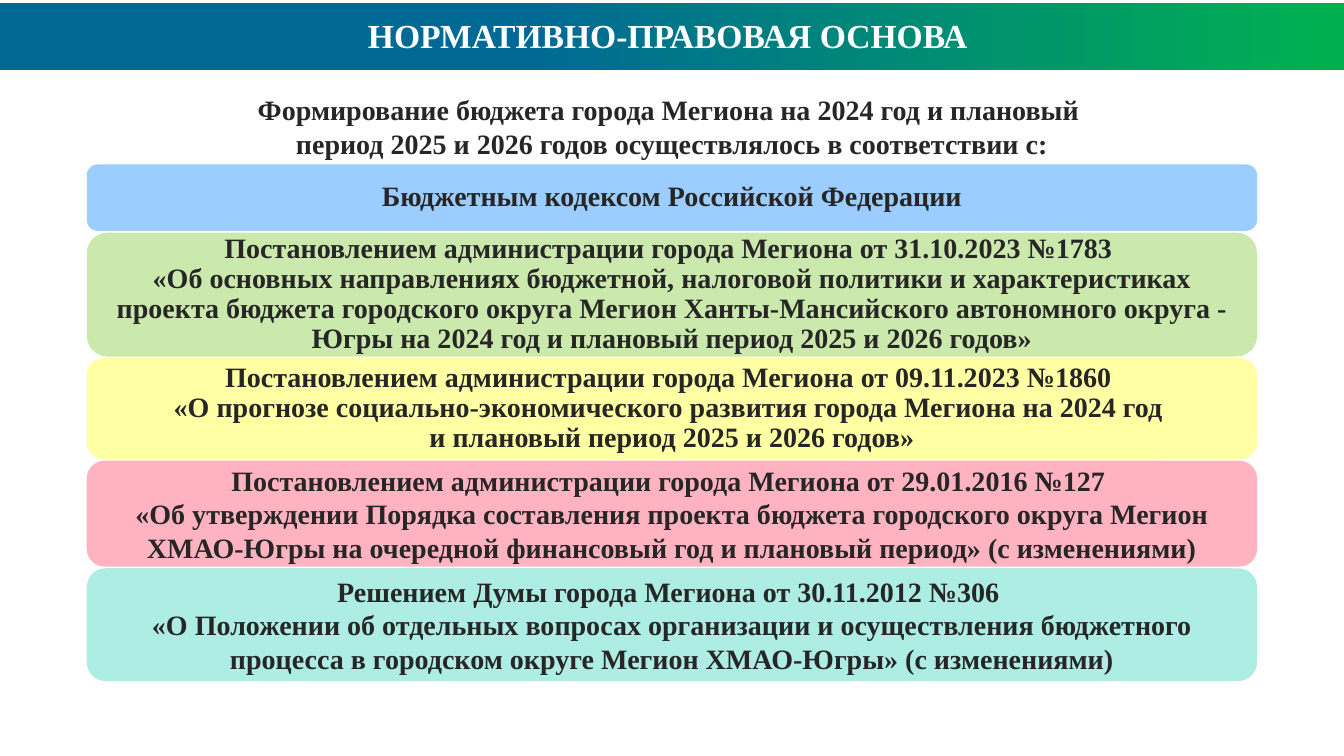
import pptx
import pptx.util
import pptx.dml.color
import pptx.enum.shapes
import pptx.enum.text

Pt = pptx.util.Pt
Anchor = pptx.enum.text.MSO_ANCHOR
Shapes = pptx.enum.shapes.MSO_SHAPE

COLOURS = {
    "ocean": "006A95", "emerald": "00B050", "white": "FFFFFF", "ink": "262626",
    "blue": "9BCDFF", "green": "CCE9AD", "yellow": "FFFFA3", "pink": "FFB3C0", "mint": "ADEDE4",
}
HEADING = ["НОРМАТИВНО-ПРАВОВАЯ ОСНОВА "]
INTRO = [
    "Формирование бюджета города Мегиона на 2024 год и плановый \n"
    "период 2025 и 2026 годов осуществлялось в соответствии с:"
]
ACTS = [
    ("blue", 47.5, 0.9, ["Бюджетным кодексом Российской Федерации"]),
    ("green", 88.6, 0.9, [
        "Постановлением администрации города Мегиона от 31.10.2023 №1783 \n"
        "«Об основных направлениях бюджетной, налоговой политики и характеристиках "
        "проекта бюджета городского округа Мегион Ханты-Мансийского автономного округа - "
        "Югры на 2024 год и плановый период 2025 и 2026 годов»"]),
    ("yellow", 72, 0.9, [
        "Постановлением администрации города Мегиона от 09.11.2023 №1860 \n"
        "«О прогнозе социально-экономического развития города Мегиона на 2024 год \n"
        "и плановый период 2025 и 2026 годов»"]),
    ("pink", 75.6, 1.0, [
        "Постановлением администрации города Мегиона от 29.01.2016 №127 ",
        "«Об утверждении Порядка составления проекта бюджета городского округа Мегион "
        "ХМАО-Югры на очередной финансовый год и плановый период» (с изменениями)"]),
    ("mint", 80.6, 1.0, [
        "Решением Думы города Мегиона от 30.11.2012 №306 ",
        "«О Положении об отдельных вопросах организации и осуществления бюджетного "
        "процесса в городском округе Мегион ХМАО-Югры» (с изменениями)"]),
]
PAGE_WIDTH, PAGE_HEIGHT = 960, 540
ACT_LEFT, ACT_TOP, ACT_WIDTH, ACT_GAP = 62, 117.4, 836, 1.2
ACT_INSET = 6


def colour(name):
    return pptx.dml.color.RGBColor.from_string(COLOURS[name])


def apply(target, formats):
    for name, value in formats.items():
        setattr(target, name, value)


def add_block(page, shape, left, top, width, height):
    block = page.shapes.add_shape(shape, Pt(left), Pt(top), Pt(width), Pt(height))
    block.shadow.inherit = False
    block.line.fill.background()
    return block


def write(box, lines, size, ink, spacing, frame_formats):
    frame = box.text_frame
    apply(frame, {"word_wrap": True, **frame_formats})
    for index, line in enumerate(lines):
        para = frame.add_paragraph() if index else frame.paragraphs[0]
        para.text = line
        apply(para, {"alignment": pptx.enum.text.PP_ALIGN.CENTER, "line_spacing": spacing})
        for span in para.runs:
            apply(span.font, {"name": "Times New Roman", "size": Pt(size), "bold": True})
            span.font.color.rgb = colour(ink)


def main():
    deck = pptx.Presentation()
    apply(deck, {"slide_width": Pt(PAGE_WIDTH), "slide_height": Pt(PAGE_HEIGHT)})
    page = deck.slides.add_slide(deck.slide_layouts[6])

    banner = add_block(page, Shapes.RECTANGLE, 0, 2.2, PAGE_WIDTH, 48)
    banner.fill.gradient()
    banner.fill.gradient_angle = 0
    for stop, (position, name) in zip(banner.fill.gradient_stops, [(0.39, "ocean"), (1, "emerald")]):
        stop.position = position
        stop.color.rgb = colour(name)

    for lines, top, height, size, ink in [
        (HEADING, 7.2, 36, 24, "white"),
        (INTRO, 62.6, 62, 20, "ink"),
    ]:
        box = page.shapes.add_textbox(0, Pt(top), Pt(PAGE_WIDTH), Pt(height))
        write(box, lines, size, ink, 1.0, {"vertical_anchor": Anchor.TOP})

    sides = ("left", "top", "right", "bottom")
    act_frame = {f"margin_{side}": Pt(ACT_INSET) for side in sides}
    act_frame["vertical_anchor"] = Anchor.MIDDLE
    top = ACT_TOP
    for name, height, spacing, lines in ACTS:
        act = add_block(page, Shapes.ROUNDED_RECTANGLE, ACT_LEFT, top, ACT_WIDTH, height)
        act.fill.solid()
        act.fill.fore_color.rgb = colour(name)
        write(act, lines, 20, "ink", spacing, act_frame)
        top += height + ACT_GAP

    deck.save("out.pptx")


if __name__ == "__main__":
    main()
